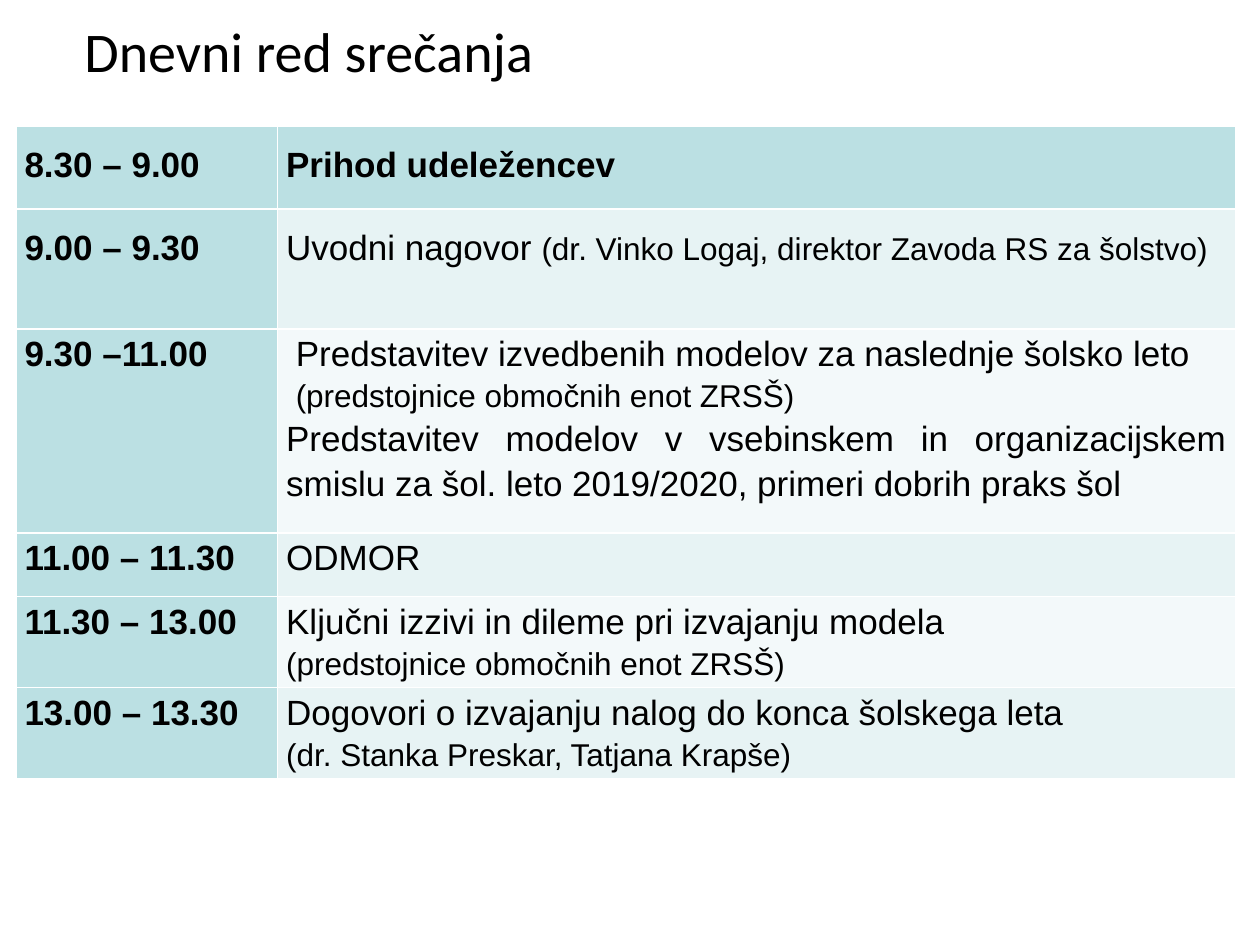
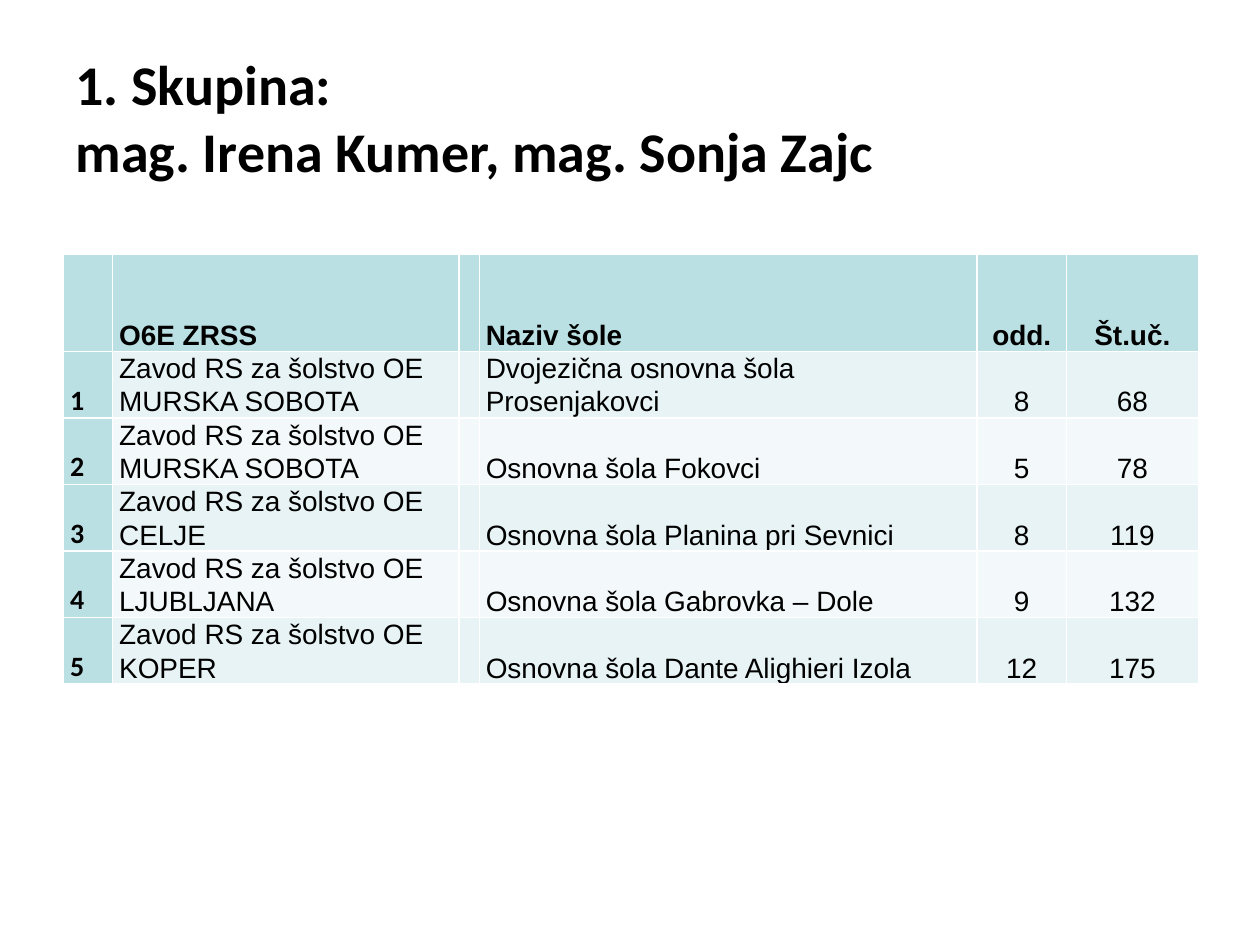
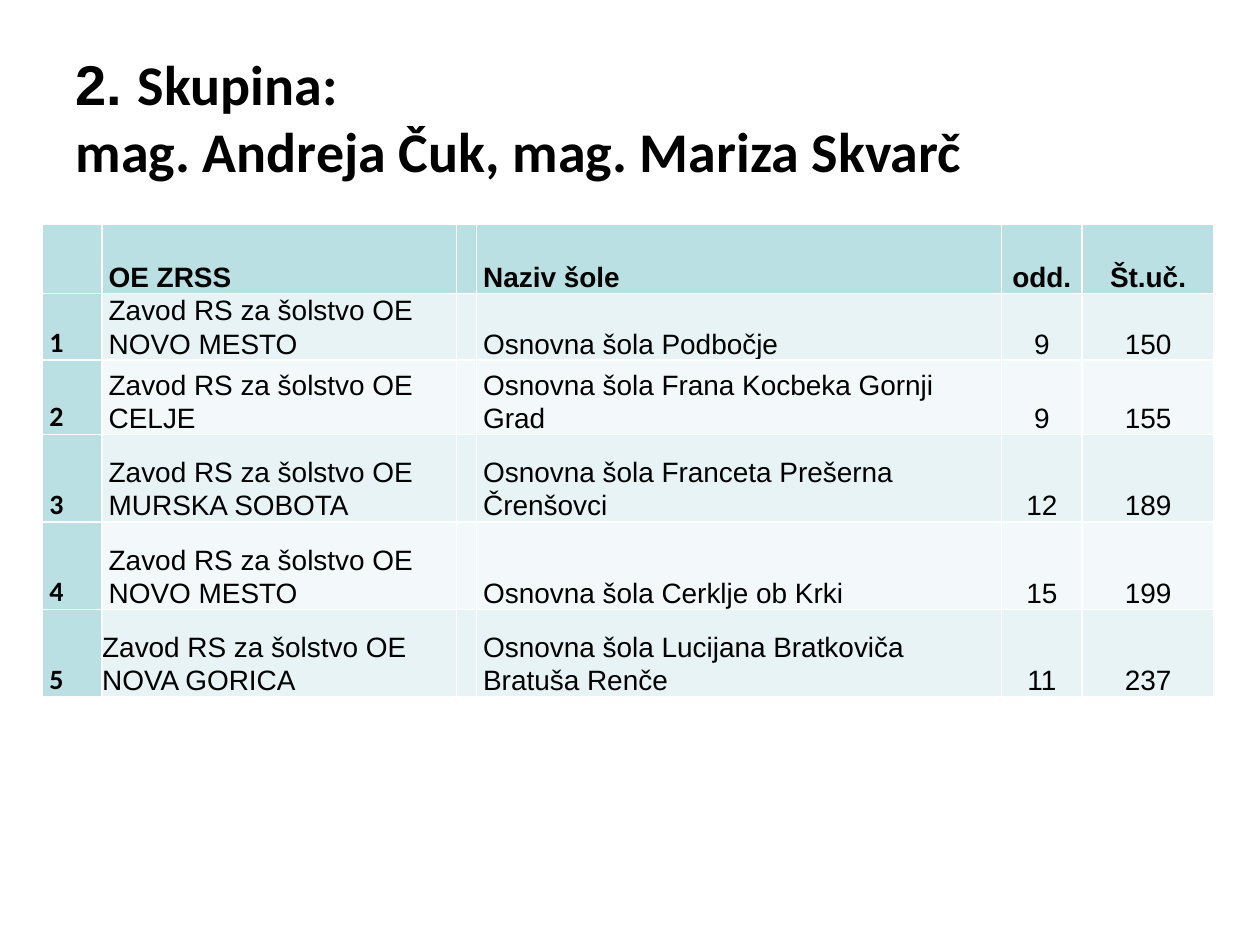
from dataclasses import dataclass

from pptx import Presentation
from pptx.dml.color import RGBColor
from pptx.enum.text import MSO_ANCHOR, MSO_AUTO_SIZE, PP_ALIGN
from pptx.util import Pt


@dataclass(frozen=True)
class Theme:
    """Colours, fonts and type sizes shared by the slides."""
    text: RGBColor = RGBColor(0x00, 0x00, 0x00)
    head: RGBColor = RGBColor(0xBB, 0xE0, 0xE3)
    bands: tuple = (RGBColor(0xE7, 0xF3, 0xF4), RGBColor(0xF3, 0xF9, 0xFA))
    heading_font: str = "Calibri"
    body_font: str = "Arial"
    title: int = 32
    agenda: int = 20
    note: int = 18
    school: int = 16
    small: int = 12


THEME = Theme()

AGENDA_COLS = (149.5, 547.5)
AGENDA = [
    ("8.30 – 9.00", [[("Prihod udeležencev", THEME.agenda)]], 47.5, 1.5),
    ("9.00 – 9.30", [[("Uvodni nagovor ", THEME.agenda),
                      ("(dr. Vinko Logaj, direktor Zavoda RS za šolstvo)", THEME.note)]],
     68.5, 1.5),
    ("9.30 –11.00", [
        [("Predstavitev izvedbenih modelov za naslednje šolsko leto", THEME.agenda)],
        [("(predstojnice območnih enot ZRSŠ)", THEME.note)],
        [("Predstavitev modelov v vsebinskem in organizacijskem smislu za šol. leto "
          "2019/2020, primeri dobrih praks šol", THEME.agenda)]], 116.5, 1.15),
    ("11.00 – 11.30", [[("ODMOR", THEME.agenda)]], 36.5, 1.15),
    ("11.30 – 13.00", [[("Ključni izzivi in dileme pri izvajanju modela", THEME.agenda)],
                       [("(predstojnice območnih enot ZRSŠ)", THEME.note)]], 52, 1.15),
    ("13.00 – 13.30", [[("Dogovori o izvajanju nalog do konca šolskega leta", THEME.agenda)],
                       [("(dr. Stanka Preskar, Tatjana Krapše)", THEME.note)]], 52, 1.15),
]
INDENTED = {(2, 0), (2, 1)}

GROUP_1 = [
    ("MURSKA SOBOTA", "Dvojezična osnovna šola Prosenjakovci", 8, 68),
    ("MURSKA SOBOTA", "Osnovna šola Fokovci", 5, 78),
    ("CELJE", "Osnovna šola Planina pri Sevnici", 8, 119),
    ("LJUBLJANA", "Osnovna šola Gabrovka – Dole", 9, 132),
    ("KOPER", "Osnovna šola Dante Alighieri Izola", 12, 175),
]
GROUP_2 = [
    ("NOVO MESTO", "Osnovna šola Podbočje", 9, 150),
    ("CELJE", "Osnovna šola Frana Kocbeka Gornji Grad", 9, 155),
    ("MURSKA SOBOTA", "Osnovna šola Franceta Prešerna Črenšovci", 12, 189),
    ("NOVO MESTO", "Osnovna šola Cerklje ob Krki", 15, 199),
    ("NOVA GORICA", "Osnovna šola Lucijana Bratkoviča Bratuša Renče", 11, 237),
]


def style(font, size, name=THEME.body_font, bold=False):
    """Format a paragraph or run font."""
    font.size, font.name, font.bold = Pt(size), name, bold
    font.color.rgb = THEME.text


def add_titled_slide(prs, box, runs, bold=True):
    """Add a title-only slide with its title of (text, font name) runs."""
    slide = prs.slides.add_slide(prs.slide_layouts[5])
    sp = slide.shapes.title
    sp.left, sp.top, sp.width, sp.height = map(Pt, box)
    tf = sp.text_frame
    tf.auto_size = MSO_AUTO_SIZE.NONE
    tf.vertical_anchor = MSO_ANCHOR.MIDDLE
    p = tf.paragraphs[0]
    p.alignment = PP_ALIGN.LEFT
    for i, (text, name) in enumerate(runs):
        for j, line in enumerate(text.split("\n")):
            if j:
                p.add_line_break()
            r = p.add_run()
            r.text = line
            style(r.font, THEME.title, name, bold)
    return slide


def add_banded_table(slide, left, top, cols, rows, inset, anchor):
    """Add a table with a tinted first row and column and banded cells."""
    table = slide.shapes.add_table(len(rows), len(cols), Pt(left), Pt(top),
                                   Pt(sum(cols)), Pt(sum(rows))).table
    table.first_col = True
    for column, width in zip(table.columns, cols):
        column.width = Pt(width)
    for i, (row, height) in enumerate(zip(table.rows, rows)):
        row.height = Pt(height)
        for j, cell in enumerate(row.cells):
            cell.margin_left = cell.margin_right = Pt(inset)
            cell.margin_top = cell.margin_bottom = 0
            cell.vertical_anchor = anchor
            cell.fill.solid()
            tinted = i == 0 or j == 0
            cell.fill.fore_color.rgb = THEME.head if tinted else THEME.bands[(i - 1) % 2]
    return table


def fill_agenda(slide, left, top):
    """Place the meeting agenda."""
    table = add_banded_table(slide, left, top, AGENDA_COLS, [row[2] for row in AGENDA],
                             5, MSO_ANCHOR.TOP)
    for i, (time, lines, _, spacing) in enumerate(AGENDA):
        p = table.cell(i, 0).text_frame.paragraphs[0]
        p.text, p.line_spacing = time, spacing
        style(p.font, THEME.agenda, bold=True)
        tf = table.cell(i, 1).text_frame
        for j, runs in enumerate(lines):
            p = tf.add_paragraph() if j else tf.paragraphs[0]
            p.alignment, p.line_spacing = PP_ALIGN.JUSTIFY, spacing
            if (i, j) in INDENTED:
                p._p.get_or_add_pPr().set("marL", str(Pt(5.5)))
            for text, size in runs:
                r = p.add_run()
                r.text = text
                style(r.font, size, bold=i == 0)


def add_colon(slide, box):
    """Place the small colon over the agenda."""
    tf = slide.shapes.add_textbox(*map(Pt, box)).text_frame
    tf.word_wrap = True
    tf.vertical_anchor = MSO_ANCHOR.TOP
    p = tf.paragraphs[0]
    p.text = ":"
    style(p.font, THEME.small, THEME.heading_font)


def fill_schools(slide, left, top, cols, rows, unit_head, schools):
    """Place a numbered table of schools."""
    table = add_banded_table(slide, left, top, cols, rows, 3.75, MSO_ANCHOR.BOTTOM)
    lines = [("", unit_head, "", "Naziv šole", "odd.", "Št.uč.")]
    lines += [(n, f"Zavod RS za šolstvo OE {place}", "", name, classes, pupils)
              for n, (place, name, classes, pupils) in enumerate(schools, 1)]
    for i, line in enumerate(lines):
        for j, value in enumerate(line):
            p = table.cell(i, j).text_frame.paragraphs[0]
            p.text, p.line_spacing = str(value), 1.07
            p.alignment = PP_ALIGN.CENTER if j > 3 else PP_ALIGN.LEFT
            name = THEME.heading_font if i and j == 0 else THEME.body_font
            style(p.font, THEME.school, name, i == 0 or j == 0)
    return table


def main():
    """Build the three slides."""
    prs = Presentation()
    prs.slide_width, prs.slide_height = Pt(720), Pt(540)
    heading, body = THEME.heading_font, THEME.body_font
    group_box = (36, 21.6, 648, 90)

    slide = add_titled_slide(prs, (41, 0, 648, 57), [("Dnevni red srečanja", heading)], False)
    fill_agenda(slide, 9, 72)
    add_colon(slide, (258, 132.5, 462, 44))

    slide = add_titled_slide(prs, group_box,
                             [("1. Skupina:\nmag. Irena Kumer, mag. Sonja Zajc", heading)])
    fill_schools(slide, 36.4, 145.3, (28, 198, 11.5, 284.5, 51, 75.5),
                 [55.5] + [38] * 5, "O6E ZRSS", GROUP_1)

    slide = add_titled_slide(prs, group_box, [
        ("2. ", body), ("Skupina:\nmag. Andreja Čuk, mag. Mariza Skvarč", heading)])
    table = fill_schools(slide, 24.4, 128.2, (34, 202.5, 11.5, 300, 46, 75.5),
                         [39.5, 38, 42.5] + [50] * 3, "OE ZRSS", GROUP_2)
    last_unit = table.cell(5, 1)
    last_unit.margin_left = last_unit.margin_right = 0

    prs.save("out.pptx")


if __name__ == "__main__":
    main()
